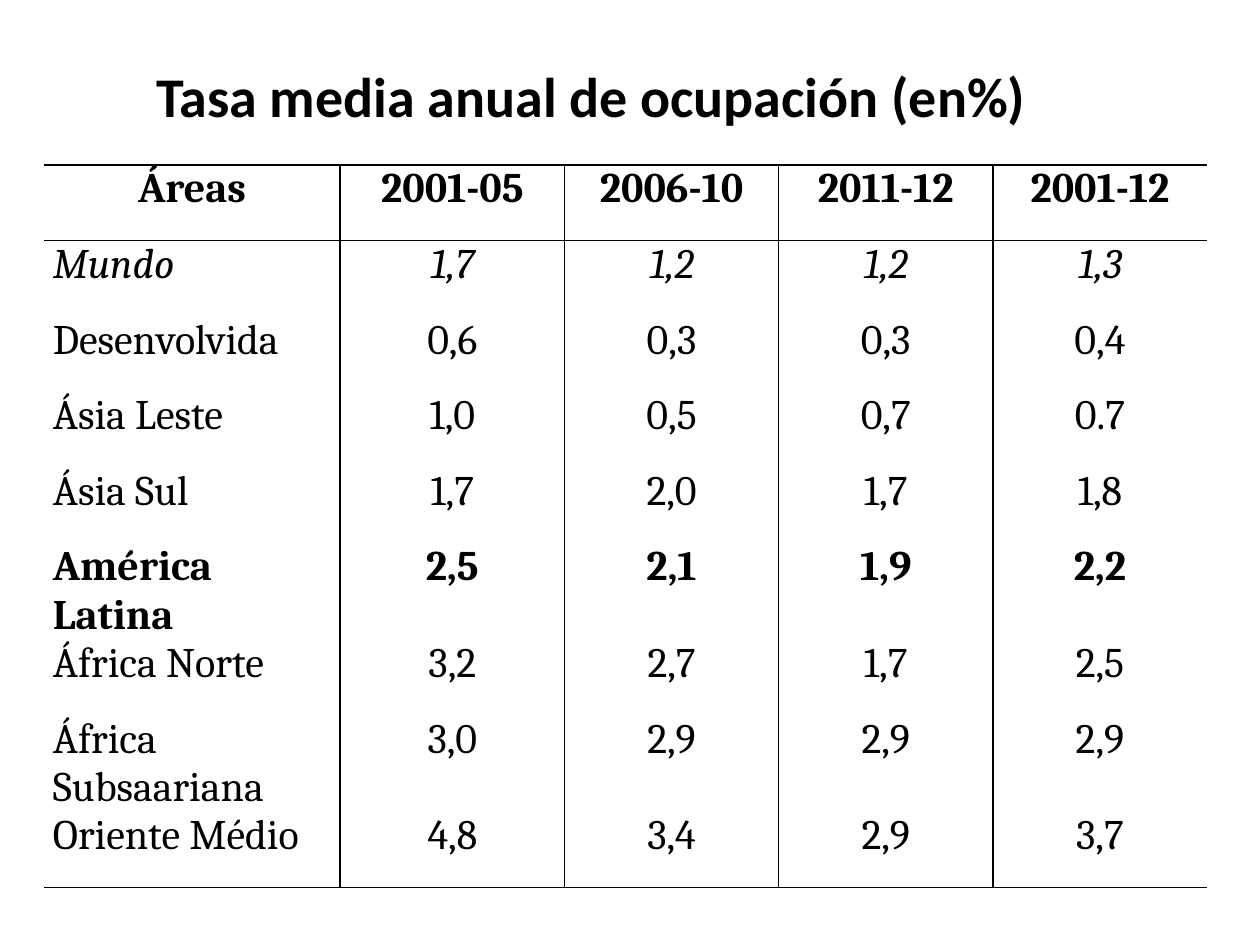
from pptx import Presentation
from pptx.dml.color import RGBColor
from pptx.enum.text import MSO_ANCHOR, PP_ALIGN
from pptx.oxml import parse_xml
from pptx.oxml.ns import nsdecls
from pptx.util import Inches, Pt

HEAD = ["Áreas", "2001-05", "2006-10", "2011-12", "2001-12"]
ROWS = [
    HEAD,
    ["Mundo", "1,7", "1,2", "1,2", "1,3"],
    ["Desenvolvida", "0,6", "0,3", "0,3", "0,4"],
    ["Ásia Leste", "1,0", "0,5", "0,7", "0.7"],
    ["Ásia Sul", "1,7", "2,0", "1,7", "1,8"],
    ["América Latina", "2,5", "2,1", "1,9", "2,2"],
    ["África Norte", "3,2", "2,7", "1,7", "2,5"],
    ["África Subsaariana", "3,0", "2,9", "2,9", "2,9"],
    ["Oriente Médio", "4,8", "3,4", "2,9", "3,7"],
]
BOLD = {"Áreas", "América Latina"}
ITALIC = {"Mundo"}
WIDTHS = [2.35, 1.78, 1.7, 1.7, 1.7]


def color(code):
    return RGBColor.from_string(code)


class Deck:
    ink = "000000"

    def __init__(self, slide):
        self.slide = slide

    def style(self, par, face, size, bold=False, italic=False):
        font = par.font
        font.name, font.size = face, Pt(size)
        font.bold, font.italic = bold, italic
        font.color.rgb = color(self.ink)

    def title(self, text, left, top, width, height):
        box = self.slide.shapes.title
        box.left, box.top = Inches(left), Inches(top)
        box.width, box.height = Inches(width), Inches(height)
        frame = box.text_frame
        frame.text = text
        frame.vertical_anchor = MSO_ANCHOR.TOP
        par = frame.paragraphs[0]
        par.alignment = PP_ALIGN.LEFT
        self.style(par, "Calibri", 32, bold=True)

    def border(self, cell, sides):
        """Draw the named sides of a cell and clear the others."""
        props = cell._tc.get_or_add_tcPr()
        for spot, side in enumerate("LRTB"):
            fill = "<a:noFill/>"
            if side in sides:
                fill = f'<a:solidFill><a:srgbClr val="{self.ink}"/></a:solidFill>'
            line = f'<a:ln{side} {nsdecls("a")} w="{Pt(1)}">{fill}</a:ln{side}>'
            props.insert(spot, parse_xml(line))

    def cell(self, cell, text, align, bold, italic):
        cell.fill.background()
        cell.margin_left = cell.margin_right = Inches(0.07)
        cell.margin_top = cell.margin_bottom = 0
        cell.text = text
        par = cell.text_frame.paragraphs[0]
        par.alignment = align
        self.style(par, "Cambria", 24, bold, italic)

    def table(self, rows, widths, left, top, pitch):
        grid = self.slide.shapes.add_table(
            len(rows), len(widths), Inches(left), Inches(top),
            Inches(sum(widths)), Inches(pitch * len(rows))).table
        grid.first_row = grid.horz_banding = False
        for col, width in zip(grid.columns, widths):
            col.width = Inches(width)
        for r, row in enumerate(rows):
            grid.rows[r].height = Inches(pitch)
            for c, text in enumerate(row):
                label = r > 0 and c == 0
                align = PP_ALIGN.JUSTIFY if label else PP_ALIGN.CENTER
                cell = grid.cell(r, c)
                self.cell(cell, text, align, row[0] in BOLD, row[0] in ITALIC)
                # Rules between columns, around the header and at the foot
                sides = {"L": c > 0, "R": c < len(row) - 1,
                         "T": r < 2, "B": r in (0, len(rows) - 1)}
                self.border(cell, [s for s, on in sides.items() if on])


def main():
    show = Presentation()
    show.slide_width, show.slide_height = Inches(10), Inches(7.5)
    deck = Deck(show.slides.add_slide(show.slide_layouts[5]))

    # Heading
    deck.title("Tasa media anual de ocupación (en%)", 1.14, 0.44, 8.19, 6.38)

    # Rates by area and period
    deck.table(ROWS, WIDTHS, 0.35, 1.31, 0.6)

    show.save("out.pptx")


if __name__ == "__main__":
    main()
